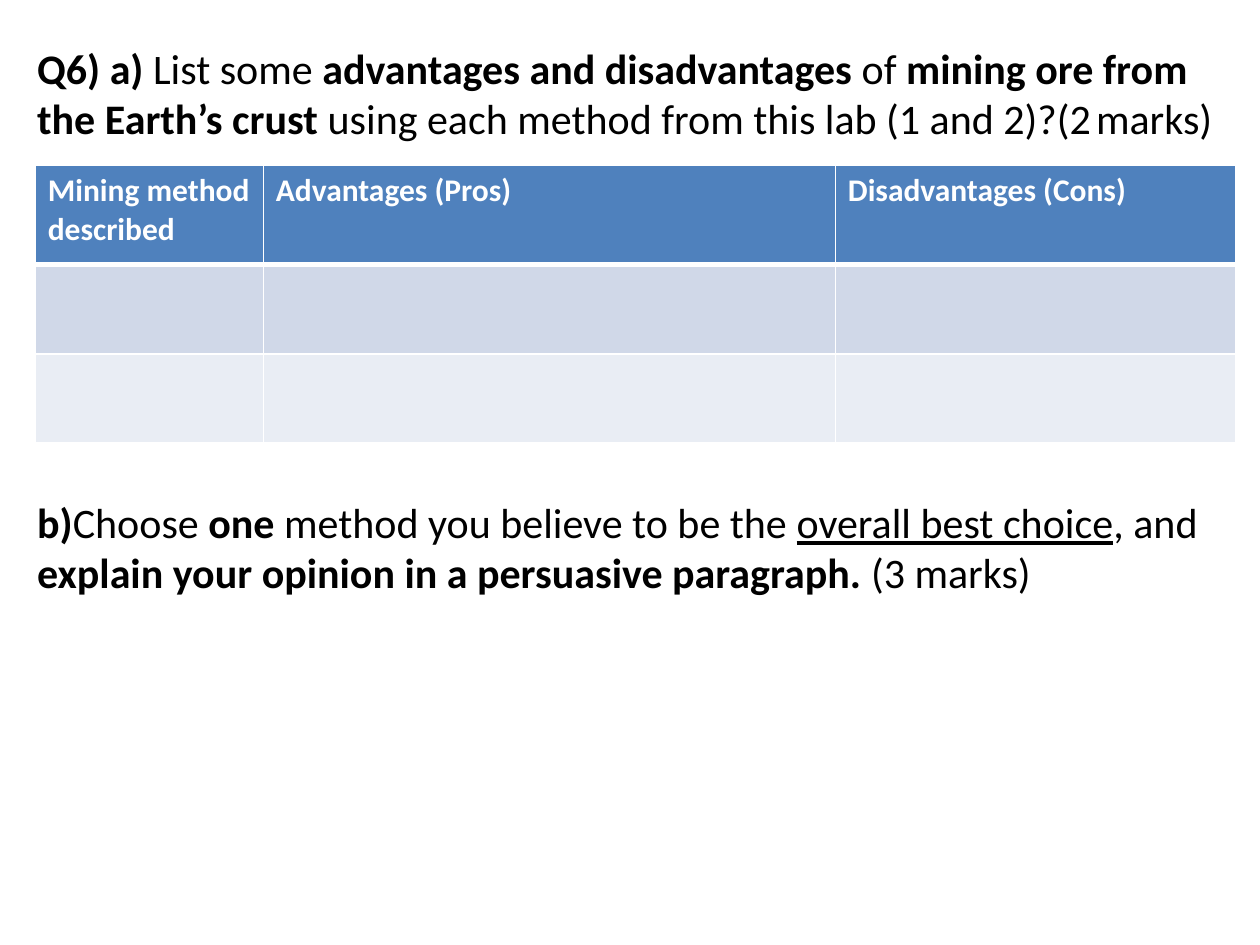
from dataclasses import dataclass
from typing import Any

from lxml.etree import SubElement
from pptx import Presentation
from pptx.dml.color import RGBColor
from pptx.enum.text import MSO_AUTO_SIZE
from pptx.oxml.ns import qn
from pptx.util import Inches, Pt

BLACK = RGBColor(0x00, 0x00, 0x00)
WHITE = RGBColor(0xFF, 0xFF, 0xFF)
HEADER_BLUE = RGBColor(0x4F, 0x81, 0xBD)
BAND_DARK = RGBColor(0xD0, 0xD8, 0xE8)
BAND_LIGHT = RGBColor(0xE9, 0xED, 0xF4)

QUESTION_A = [
    ("Q6) a) ", {"bold": True}),
    ("List some ", {}),
    ("advantages and disadvantages ", {"bold": True}),
    ("of ", {}),
    ("mining ore from the Earth’s crust", {"bold": True}),
    (" using each method from this lab (1 and 2)?(2", {}),
    (" ", {"size": 12}),
    ("marks)", {}),
]
QUESTION_B = [
    ("b)", {"bold": True}),
    ("Choose ", {}),
    ("one", {"bold": True}),
    (" method you believe to be the ", {}),
    ("overall best choice", {"underline": True}),
    (", and ", {}),
    ("explain your opinion in a persuasive paragraph. ", {"bold": True}),
    ("(3 marks)", {}),
]
HEADINGS = ["Mining method described", "Advantages (Pros)", "Disadvantages (Cons)"]


def write(paragraph, text, font="Calibri", size=24, color=BLACK, bold=False, underline=False):
    run = paragraph.add_run()
    run.text = text
    run.font.name = font
    run.font.size = Pt(size)
    run.font.color.rgb = color
    run.font.bold = bold
    run.font.underline = underline


@dataclass
class Worksheet:
    slide: Any
    width: int
    height: int
    heading_size: int = 18
    border: RGBColor = WHITE

    def place(self, left, top, width, height):
        return (int(left * self.width / 100), int(top * self.height / 100),
                int(width * self.width / 100), int(height * self.height / 100))

    def questions(self, area, paragraphs, gap):
        frame = self.slide.shapes.add_textbox(*self.place(*area)).text_frame
        frame.word_wrap = True
        frame.auto_size = MSO_AUTO_SIZE.SHAPE_TO_FIT_TEXT
        for index, pieces in enumerate(paragraphs):
            paragraph = frame.add_paragraph() if index else frame.paragraphs[0]
            paragraph.space_before = Pt(gap if index else 0)
            for text, style in pieces:
                write(paragraph, text, **style)

    def edge(self, cell, side, points):
        line = SubElement(cell._tc.get_or_add_tcPr(), qn(f"a:ln{side}"), w=str(Pt(points)))
        fill = SubElement(line, qn("a:solidFill"))
        SubElement(fill, qn("a:srgbClr"), val=str(self.border))

    def answer_table(self, area, headings, column_weights, row_weights, fills):
        left, top, width, height = self.place(*area)
        table = self.slide.shapes.add_table(
            len(fills), len(headings), left, top, width, height).table
        for column, weight in zip(table.columns, column_weights):
            column.width = int(width * weight / sum(column_weights))
        for row_index, (row, weight) in enumerate(zip(table.rows, row_weights)):
            row.height = int(height * weight / sum(row_weights))
            for column_index, cell in enumerate(row.cells):
                for side in "LRTB":
                    header_rule = (row_index, side) in [(0, "B"), (1, "T")]
                    self.edge(cell, side, 3 if header_rule else 1)
                cell.fill.solid()
                cell.fill.fore_color.rgb = fills[row_index]
                if row_index == 0:
                    write(cell.text_frame.paragraphs[0], headings[column_index],
                          size=self.heading_size, color=WHITE, bold=True)


def main():
    deck = Presentation()
    deck.slide_width, deck.slide_height = Inches(10), Inches(7.5)
    slide = deck.slides.add_slide(deck.slide_layouts[6])
    sheet = Worksheet(slide, deck.slide_width, deck.slide_height)
    sheet.questions((1.97, 3.8, 95.4, 60.5), [QUESTION_A, QUESTION_B], gap=202)
    sheet.answer_table((2.8, 17.5, 95.3, 29.4), HEADINGS, (1.81, 4.54, 3.18),
                       (0.79, 0.71, 0.71), (HEADER_BLUE, BAND_DARK, BAND_LIGHT))
    deck.save("out.pptx")


if __name__ == "__main__":
    main()
